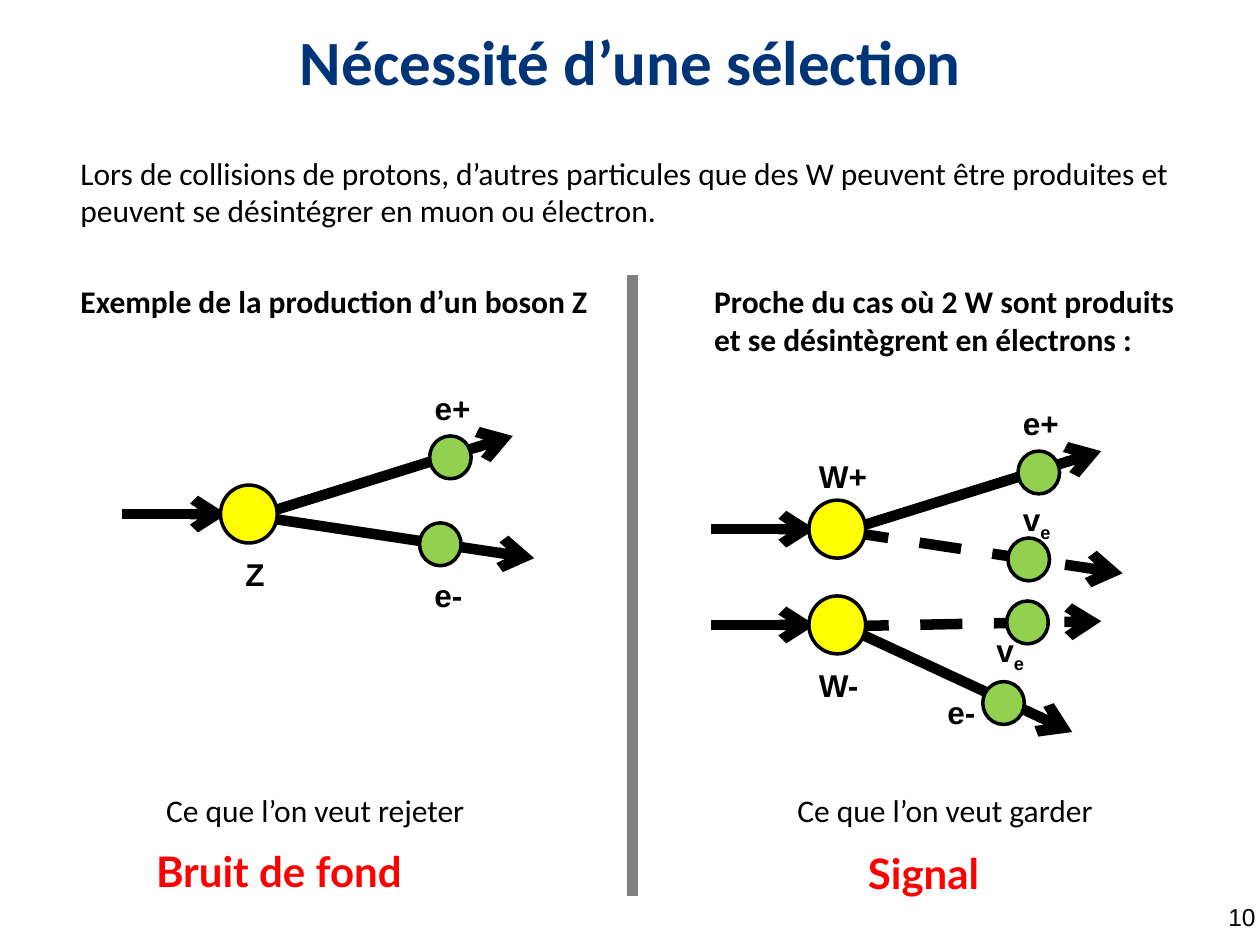
from dataclasses import dataclass

from lxml.etree import SubElement
from pptx import Presentation
from pptx.dml.color import RGBColor
from pptx.enum.dml import MSO_LINE
from pptx.enum.shapes import MSO_CONNECTOR, MSO_SHAPE
from pptx.enum.text import MSO_AUTO_SIZE, PP_ALIGN
from pptx.oxml.ns import qn
from pptx.util import Emu, Pt

PX = 9144
COLOURS = {
    "black": "000000",
    "title": "003478",
    "verdict": "FF0000",
    "divider": "808080",
    "boson": "FFFF00",
    "lepton": "92D050",
}
STYLES = {
    "title": ("title", {"name": "Calibri", "size": Pt(36), "bold": True}),
    "number": ("black", {"name": "Arial", "size": Pt(14)}),
    "body": ("black", {"name": "Calibri", "size": Pt(18)}),
    "heading": ("black", {"name": "Calibri", "size": Pt(18), "bold": True}),
    "label": ("black", {"name": "Arial", "size": Pt(18), "bold": True}),
    "verdict": ("verdict", {"name": "Lato", "size": Pt(24), "bold": True}),
}


@dataclass
class Caption:
    text: str
    style: str
    box: tuple[int, int, int, int]
    wrap: bool = False
    grow: bool = True
    align: PP_ALIGN = PP_ALIGN.LEFT
    subscript: str = ""


@dataclass
class Label:
    text: str
    x: int
    y: int
    width: int
    subscript: str = ""


@dataclass
class Daughter:
    start: tuple[int, int]
    end: tuple[int, int]
    ball: tuple[int, int]
    label: Label
    dashed: bool = False


@dataclass
class Decay:
    x: int
    y: int
    label: Label
    daughters: list[Daughter]


CAPTIONS = [
    Caption("Nécessité d’une sélection", "title", (-35, 13, 1071, 71), wrap=True, align=PP_ALIGN.CENTER),
    Caption("10", "number", (965, 711, 71, 29), wrap=True, grow=False),
    Caption(
        "Lors de collisions de protons, d’autres particules que des W peuvent être produites "
        "et peuvent se désintégrer en muon ou électron.",
        "body", (54, 117, 897, 101), wrap=True,
    ),
    Caption("Exemple de la production d’un boson Z", "heading", (54, 219, 428, 40)),
    Caption(
        "Proche du cas où 2 W sont produits et se désintègrent en électrons :",
        "heading", (557, 219, 408, 71), wrap=True,
    ),
    Caption("Ce que l’on veut rejeter", "body", (122, 623, 260, 40)),
    Caption("Ce que l’on veut garder", "body", (623, 623, 258, 40)),
    Caption("Bruit de fond", "verdict", (114, 666, 277, 50)),
    Caption("Signal", "verdict", (679, 668, 146, 50)),
]


def lower(label: Label, dashed: bool = False) -> Daughter:
    return Daughter((30, 25), (249, 58), (158, 30), label, dashed)


POSITRON = Daughter((30, 24), (232, -39), (166, -39), Label("e+", 160, -81, 49))
DECAYS = [
    Decay(175, 385, Label("Z", 10, 51, 36), [lower(Label("e-", 160, 67, 43)), POSITRON]),
    Decay(642, 397, Label("W+", -2, -39, 59), [lower(Label("v", 160, -5, 44, "e"), True), POSITRON]),
    Decay(642, 473, Label("W-", -2, 51, 52), [
        Daughter((30, 25), (209, 108), (138, 68), Label("e-", 100, 72, 43)),
        Daughter((30, 24), (232, 20), (157, 4), Label("v", 139, 23, 44, "e"), True),
    ]),
]


def emu(*lengths: int) -> list[Emu]:
    return [Emu(length * PX) for length in lengths]


def colour(name: str) -> RGBColor:
    return RGBColor.from_string(COLOURS[name])


def set_all(target, values: dict) -> None:
    for name, value in values.items():
        setattr(target, name, value)


def add_caption(slide, caption: Caption) -> None:
    shape = slide.shapes.add_textbox(*emu(*caption.box))
    set_all(shape.text_frame, {
        "word_wrap": caption.wrap,
        "auto_size": MSO_AUTO_SIZE.SHAPE_TO_FIT_TEXT if caption.grow else MSO_AUTO_SIZE.NONE,
    })
    paragraph = shape.text_frame.paragraphs[0]
    paragraph.alignment = caption.align
    colour_name, font_values = STYLES[caption.style]
    for text, baseline in ((caption.text, None), (caption.subscript, "-25000")):
        if text:
            run = paragraph.add_run()
            run.text = text
            set_all(run.font, font_values)
            run.font.color.rgb = colour(colour_name)
            if baseline:
                run._r.get_or_add_rPr().set("baseline", baseline)


def add_line(slide, start: tuple[int, int], end: tuple[int, int], colour_name: str = "black",
             arrow: bool = True, dashed: bool = False) -> None:
    connector = slide.shapes.add_connector(MSO_CONNECTOR.STRAIGHT, *emu(*start, *end))
    connector.line.color.rgb = colour(colour_name)
    connector.line.width = Pt(6)
    if dashed:
        connector.line.dash_style = MSO_LINE.DASH
    if arrow:
        SubElement(connector.line._get_or_add_ln(), qn("a:tailEnd"), type="arrow")
    SubElement(connector._element.spPr, qn("a:effectLst"))


def add_ball(slide, x: int, y: int, width: int, height: int, colour_name: str) -> None:
    shape = slide.shapes.add_shape(MSO_SHAPE.OVAL, *emu(x, y, width, height))
    shape.shadow.inherit = False
    shape.fill.solid()
    shape.fill.fore_color.rgb = colour(colour_name)
    shape.line.color.rgb = colour("black")
    shape.line.width = Pt(2)


def add_decay(slide, decay: Decay) -> None:
    def place(point: tuple[int, int]) -> tuple[int, int]:
        return decay.x + point[0], decay.y + point[1]

    add_line(slide, place((-78, 23)), place((5, 23)))
    for daughter in decay.daughters:
        add_line(slide, place(daughter.start), place(daughter.end), dashed=daughter.dashed)
        add_ball(slide, *place(daughter.ball), 33, 34, "lepton")
    add_ball(slide, decay.x, decay.y, 45, 46, "boson")
    for label in [decay.label] + [daughter.label for daughter in decay.daughters]:
        box = (*place((label.x, label.y)), label.width, 40)
        add_caption(slide, Caption(label.text, "label", box, subscript=label.subscript))


def main() -> None:
    presentation = Presentation()
    presentation.slide_width, presentation.slide_height = emu(1000, 750)
    slide = presentation.slides.add_slide(presentation.slide_layouts[6])
    for caption in CAPTIONS:
        add_caption(slide, caption)
    for decay in DECAYS:
        add_decay(slide, decay)
    add_line(slide, (502, 218), (502, 711), "divider", arrow=False)
    presentation.save("out.pptx")


if __name__ == "__main__":
    main()
